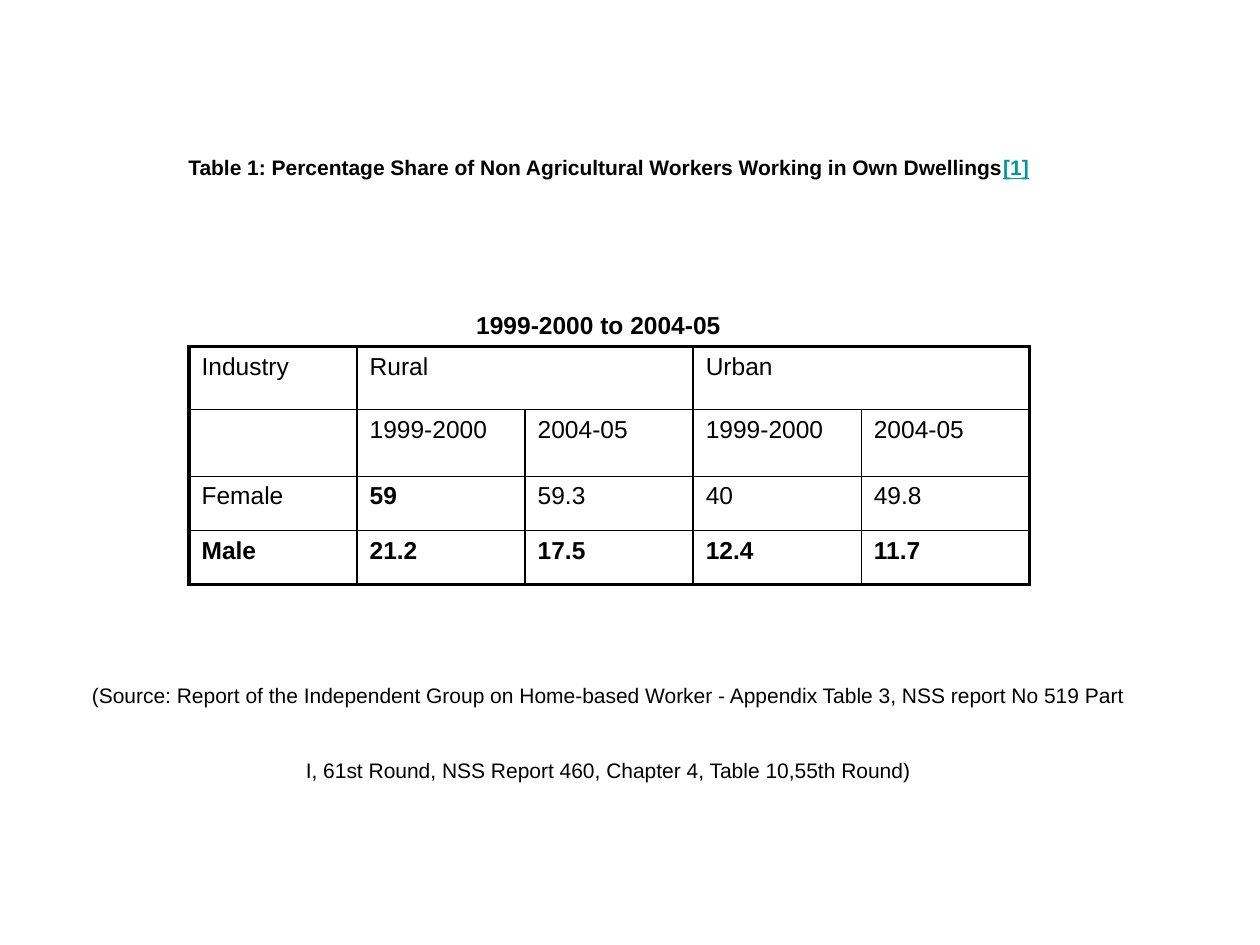
from lxml import etree
from pptx import Presentation
from pptx.dml.color import RGBColor
from pptx.enum.text import MSO_ANCHOR, PP_ALIGN
from pptx.oxml.ns import qn
from pptx.util import Inches, Pt

MIDDLE = MSO_ANCHOR.MIDDLE
TOP = MSO_ANCHOR.TOP
CENTER = PP_ALIGN.CENTER
BLACK = RGBColor(0, 0, 0)
TEAL = RGBColor(0, 0x99, 0x99)
FONT = "Arial"
THIN, THICK = 1, 2.25
ROWS = [
    ["Industry", "Rural", "", "Urban", ""],
    ["", "1999-2000", "2004-05", "1999-2000", "2004-05"],
    ["Female", "59", "59.3", "40", "49.8"],
    ["Male", "21.2", "17.5", "12.4", "11.7"],
]
HEIGHTS = [0.5, 0.53, 0.43, 0.43]
BOLD = {"59", *ROWS[-1]}


def style(run, size, bold=False, color=BLACK):
    """Set the font of one run."""
    font = run.font
    font.name, font.size, font.bold = FONT, Pt(size), bold
    font.color.rgb = color


def add_text(slide, box, text, size, bold=False, anchor=MIDDLE):
    """Place a centred line of text in the box and return its paragraph."""
    frame = slide.shapes.add_textbox(*map(Inches, box)).text_frame
    frame.word_wrap = True
    frame.vertical_anchor = anchor
    frame.margin_top = frame.margin_bottom = 0
    frame.text = text
    line = frame.paragraphs[0]
    line.alignment = CENTER
    style(line.runs[0], size, bold)
    return line


def add_title(slide, box):
    """Place the table title with its footnote mark."""
    text = "Table 1: Percentage Share of Non Agricultural Workers Working in Own Dwellings"
    line = add_text(slide, box, text, 12, True)
    mark = line.add_run()
    mark.text = "[1]"
    style(mark, 12, True, TEAL)
    mark.font.underline = True


def add_source(slide, box):
    """Place the widely spaced source note."""
    text = (
        "(Source: Report of the Independent Group on Home-based Worker - "
        "Appendix Table 3, NSS report No 519 Part I, 61st Round, "
        "NSS Report 460, Chapter 4, Table 10,55th Round)"
    )
    add_text(slide, box, text, 12, anchor=TOP).line_spacing = Pt(43)


def add_edge(cell, side, width):
    """Draw one black border of a cell."""
    props = cell._tc.get_or_add_tcPr()
    edge = etree.SubElement(props, qn(f"a:ln{side}"), w=str(Pt(width)))
    fill = etree.SubElement(edge, qn("a:solidFill"))
    etree.SubElement(fill, qn("a:srgbClr"), val=str(BLACK))


def add_grid(slide, box):
    """Place the table of shares, with a thick outer frame."""
    count, wide = len(ROWS), len(ROWS[0])
    table = slide.shapes.add_table(count, wide, *map(Inches, box)).table
    table.first_row = table.horz_banding = False
    for row, height in zip(table.rows, HEIGHTS):
        row.height = Inches(height)
    for left in (1, 3):
        table.cell(0, left).merge(table.cell(0, left + 1))
    for r, row in enumerate(ROWS):
        for c, text in enumerate(row):
            cell = table.cell(r, c)
            end = c + (cell.span_width if cell.is_merge_origin else 1)
            outer = {"L": c == 0, "R": end == wide, "T": r == 0, "B": r == count - 1}
            for side, thick in outer.items():
                add_edge(cell, side, THICK if thick else THIN)
            cell.fill.background()
            if text:
                cell.text_frame.text = text
                style(cell.text_frame.paragraphs[0].runs[0], 14, text in BOLD)


def main():
    """Build the slide and save it."""
    deck = Presentation()
    deck.slide_width, deck.slide_height = Inches(10), Inches(7.5)
    slide = deck.slides.add_slide(deck.slide_layouts[6])
    add_title(slide, (0.58, 1.18, 8.5, 0.3))
    add_text(slide, (0.5, 2.43, 8.5, 0.3), "1999-2000 to 2004-05", 14, True)
    add_grid(slide, (1.5, 2.75, 6.67, sum(HEIGHTS)))
    add_source(slide, (0.58, 5.02, 8.5, 1.2))
    deck.save("out.pptx")


if __name__ == "__main__":
    main()
